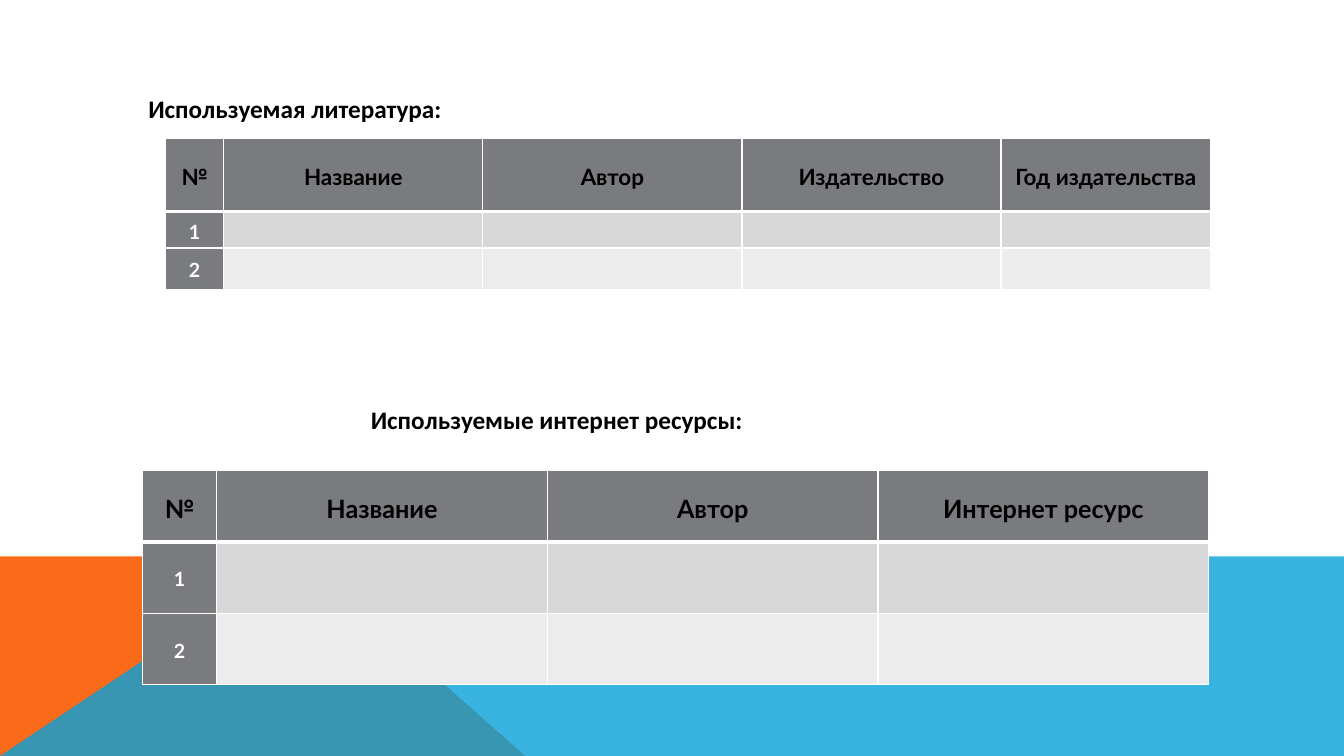
from dataclasses import dataclass

from lxml import etree
from pptx import Presentation
from pptx.dml.color import RGBColor
from pptx.enum.text import MSO_ANCHOR, MSO_AUTO_SIZE, PP_ALIGN
from pptx.oxml.ns import qn
from pptx.util import Emu, Inches, Pt

LEFT, CENTER = PP_ALIGN.LEFT, PP_ALIGN.CENTER
TOP, MIDDLE = MSO_ANCHOR.TOP, MSO_ANCHOR.MIDDLE
NO_AUTOFIT = MSO_AUTO_SIZE.NONE

SLIDE_WIDTH, SLIDE_HEIGHT = Inches(13.33), Inches(7.5)
TITLE_ONLY = 5
HEADING_FONT, TABLE_FONT = "Calibri", "Lato"
COLORS = {
    "orange": "F96A1B",
    "blue": "08A1D9",
    "gray": "797B7E",
    "odd": "D7D7D8",
    "even": "ECECEC",
    "black": "000000",
    "white": "FFFFFF",
}


@dataclass
class Band:
    corners: list[tuple[float, float]]
    color: str
    opacity: int


@dataclass
class Heading:
    text: str
    left: float
    top: float
    width: float
    height: float


@dataclass
class SourceTable:
    headers: list[str]
    left: float
    top: float
    columns: list[float]
    rows: list[float]
    header_size: int


HORIZON = 73.6
BANDS = [
    Band([(0, 100), (0, HORIZON), (22.35, HORIZON), (39.08, 100)], "orange", 100),
    Band([(0, 100), (22.28, HORIZON), (100, HORIZON), (100, 100)], "blue", 80),
]
LITERATURE = Heading("Используемая литература:", 10.28, 11.73, 28.58, 9.47)
INTERNET = Heading("Используемые интернет ресурсы:", 26.85, 52.8, 29.4, 9.47)
TABLES = [
    SourceTable(
        ["№", "Название", "Автор", "Издательство", "Год издательства"],
        12.3, 18.27, [4.35] + [19.28] * 3 + [15.6], [9.73, 4.8, 5.47], 16,
    ),
    SourceTable(
        ["№", "Название", "Автор", "Интернет ресурс"],
        10.58, 62.27, [5.55] + [24.6] * 3, [9.43] * 3, 18,
    ),
]


def across(percent: float) -> Emu:
    return Emu(round(SLIDE_WIDTH * percent / 100))


def down(percent: float) -> Emu:
    return Emu(round(SLIDE_HEIGHT * percent / 100))


def rgb(color: str) -> RGBColor:
    return RGBColor.from_string(COLORS[color])


def write(paragraph, text: str, font: str, size: int, color: str) -> None:
    run = paragraph.add_run()
    run.text = text
    run.font.name = font
    run.font.size = Pt(size)
    run.font.bold = True
    run.font.color.rgb = rgb(color)


def draw_band(slide, band: Band) -> None:
    points = [(across(x), down(y)) for x, y in band.corners]
    builder = slide.shapes.build_freeform(*points[0])
    builder.add_line_segments(points[1:], close=True)
    shape = builder.convert_to_shape()
    shape.shadow.inherit = False
    shape.line.fill.background()
    shape.fill.solid()
    shape.fill.fore_color.rgb = rgb(band.color)
    if band.opacity < 100:
        tint = shape._element.spPr.find(qn("a:solidFill")).find(qn("a:srgbClr"))
        etree.SubElement(tint, qn("a:alpha"), val=str(band.opacity * 1000))


def fill_heading(shape, heading: Heading) -> None:
    shape.left, shape.top = across(heading.left), down(heading.top)
    shape.width, shape.height = across(heading.width), down(heading.height)
    frame = shape.text_frame
    frame.word_wrap = True
    frame.auto_size = NO_AUTOFIT
    frame.vertical_anchor = TOP
    paragraph = frame.paragraphs[0]
    paragraph.alignment = LEFT
    write(paragraph, heading.text, HEADING_FONT, 18, "black")


def set_borders(cell, top: int, bottom: int) -> None:
    properties = cell._tc.get_or_add_tcPr()
    for side, width in (("L", 1), ("R", 1), ("T", top), ("B", bottom)):
        line = etree.SubElement(properties, qn(f"a:ln{side}"), w=str(Pt(width)))
        fill = etree.SubElement(line, qn("a:solidFill"))
        etree.SubElement(fill, qn("a:srgbClr"), val=COLORS["white"])


def draw_table(slide, source: SourceTable) -> None:
    table = slide.shapes.add_table(
        len(source.rows), len(source.columns),
        across(source.left), down(source.top),
        across(sum(source.columns)), down(sum(source.rows)),
    ).table
    for column, width in zip(table.columns, source.columns):
        column.width = across(width)
    for row, height in zip(table.rows, source.rows):
        row.height = down(height)
    for row in range(len(source.rows)):
        for column, header in enumerate(source.headers):
            cell = table.cell(row, column)
            set_borders(cell, 3 if row == 1 else 1, 3 if row == 0 else 1)
            cell.margin_left = cell.margin_right = Inches(0.07)
            cell.margin_top = cell.margin_bottom = 0
            cell.vertical_anchor = MIDDLE
            labelled = row == 0 or column == 0
            stripe = "odd" if row % 2 else "even"
            cell.fill.solid()
            cell.fill.fore_color.rgb = rgb("gray" if labelled else stripe)
            if labelled:
                paragraph = cell.text_frame.paragraphs[0]
                paragraph.alignment = CENTER
                paragraph.line_spacing = 1.15
                if row == 0:
                    write(paragraph, header, TABLE_FONT, source.header_size, "black")
                else:
                    write(paragraph, str(row), TABLE_FONT, 14, "white")


def main() -> None:
    deck = Presentation()
    deck.slide_width, deck.slide_height = SLIDE_WIDTH, SLIDE_HEIGHT
    slide = deck.slides.add_slide(deck.slide_layouts[TITLE_ONLY])
    for band in BANDS:
        draw_band(slide, band)
    fill_heading(slide.shapes.title, LITERATURE)
    for source in TABLES:
        draw_table(slide, source)
    fill_heading(slide.shapes.add_textbox(0, 0, 0, 0), INTERNET)
    deck.save("out.pptx")


if __name__ == "__main__":
    main()
